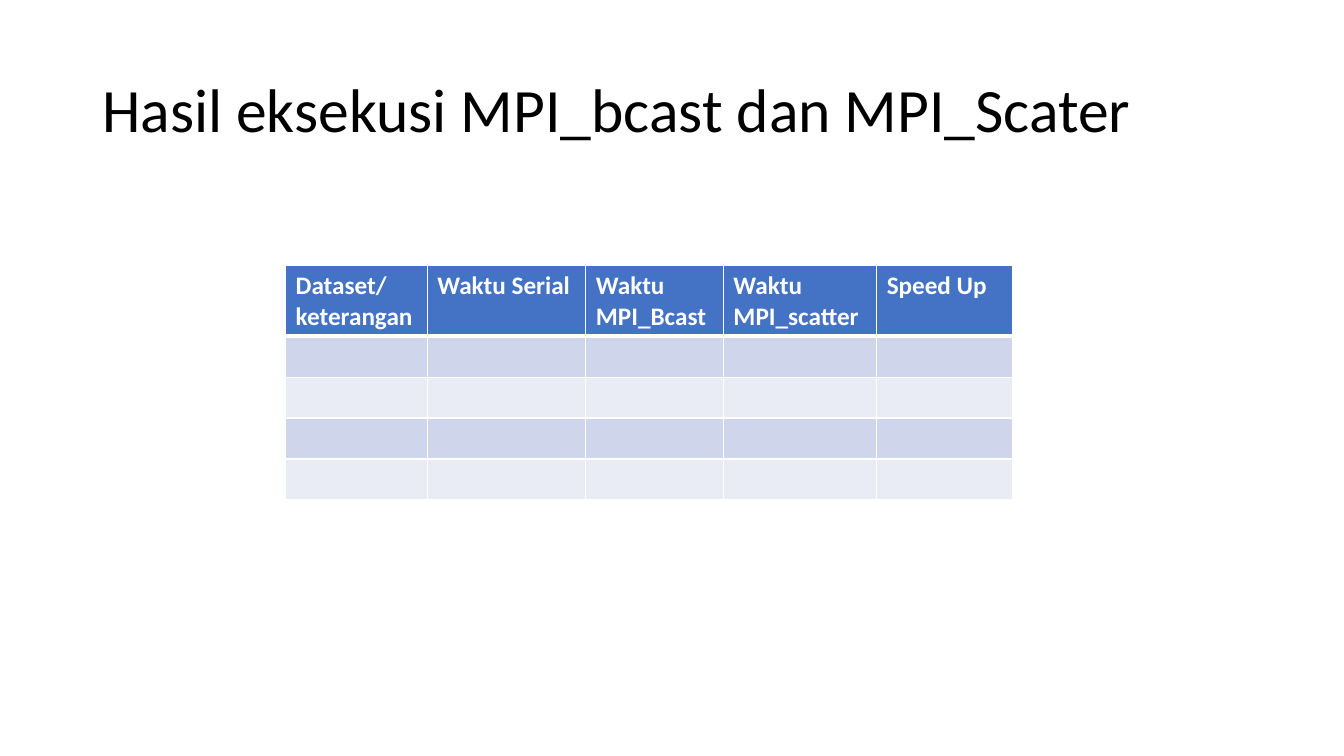
from dataclasses import dataclass

from lxml import etree
from pptx import Presentation
from pptx.dml.color import RGBColor
from pptx.enum import text
from pptx.oxml import ns

EMU_PER_PX = 9525
EMU_PER_PT = 12700


@dataclass(frozen=True)
class Theme:
    font: str = "Calibri"
    title_size: int = 44
    table_size: int = 18
    ink: str = "000000"
    paper: str = "FFFFFF"
    header: str = "4472C4"
    bands: tuple = ("CFD5EA", "E9EBF5")


THEME = Theme()
TITLE = "Hasil eksekusi MPI_bcast dan MPI_Scater"
HEADERS = ["Dataset/ keterangan", "Waktu Serial", "Waktu MPI_Bcast",
           "Waktu MPI_scatter", "Speed Up"]
COLUMN_WIDTHS = [135, 151, 131, 146, 129]
ROW_HEIGHTS = [67] + [39] * 4


def px(*lengths):
    return [n * EMU_PER_PX for n in lengths]


def style_font(font, size, color, bold=False):
    font.name = THEME.font
    font.size = size * EMU_PER_PT
    font.bold = bold
    font.color.rgb = RGBColor.from_string(color)


def add_title(slide, title, box):
    tf = slide.shapes.add_textbox(*px(*box)).text_frame
    tf.word_wrap = True
    tf.vertical_anchor = text.MSO_ANCHOR.MIDDLE
    tf.text = title
    p = tf.paragraphs[0]
    p.line_spacing = 0.9
    style_font(p.runs[0].font, THEME.title_size, THEME.ink)


def set_borders(cell, **widths):
    """Draw the cell's edges, keyed L, R, T and B, with widths in points."""
    tc_pr = cell._tc.get_or_add_tcPr()
    for side, width in widths.items():
        line = etree.SubElement(tc_pr, ns.qn(f"a:ln{side}"), w=str(width * EMU_PER_PT))
        fill = etree.SubElement(line, ns.qn("a:solidFill"))
        etree.SubElement(fill, ns.qn("a:srgbClr"), val=THEME.paper)


def fill_cell(cell, color):
    cell.fill.solid()
    cell.fill.fore_color.rgb = RGBColor.from_string(color)


def add_results_table(slide, left, top):
    box = px(left, top, sum(COLUMN_WIDTHS), sum(ROW_HEIGHTS))
    table = slide.shapes.add_table(len(ROW_HEIGHTS), len(HEADERS), *box).table
    for column, width in zip(table.columns, px(*COLUMN_WIDTHS)):
        column.width = width
    for i, (row, height) in enumerate(zip(table.rows, px(*ROW_HEIGHTS))):
        row.height = height
        color = THEME.bands[(i - 1) % 2] if i else THEME.header
        for cell in row.cells:
            set_borders(cell, L=1, R=1, T=3 if i == 1 else 1, B=1 if i else 3)
            fill_cell(cell, color)
    for cell, header in zip(table.rows[0].cells, HEADERS):
        cell.text_frame.text = header
        run = cell.text_frame.paragraphs[0].runs[0]
        style_font(run.font, THEME.table_size, THEME.paper, bold=True)


def main():
    prs = Presentation()
    prs.slide_width, prs.slide_height = px(1280, 720)
    slide = prs.slides.add_slide(prs.slide_layouts[6])
    add_title(slide, TITLE, (88, 38, 1104, 139))
    add_results_table(slide, 272, 253)
    prs.save("out.pptx")


if __name__ == "__main__":
    main()
